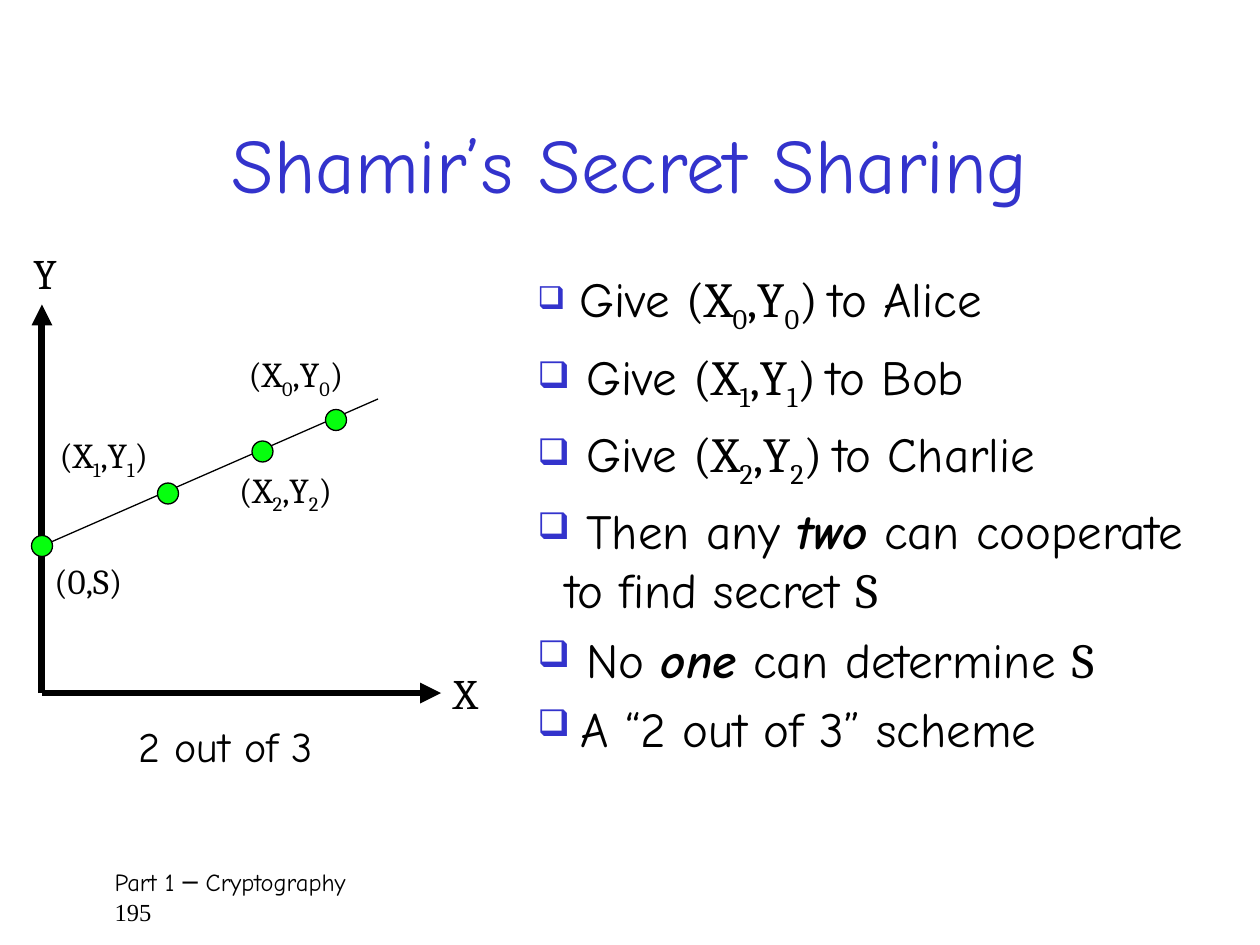
from lxml.etree import SubElement
from pptx import Presentation
from pptx.dml.color import RGBColor
from pptx.enum.shapes import MSO_CONNECTOR, MSO_SHAPE
from pptx.enum.text import MSO_ANCHOR, MSO_AUTO_SIZE, PP_ALIGN
from pptx.oxml.ns import qn
from pptx.util import Inches, Pt

CELL = Inches(1) / 12  # the slide is a grid of 120 columns by 90 rows
BLACK, BLUE, GREEN = "000000", "3333CC", "06FF0E"
HAND, SERIF, ROMAN = "Comic Neue", "Cambria", "Times New Roman"


def color(value):
    return RGBColor.from_string(value)


def cells(*counts):
    return [round(count * CELL) for count in counts]


def write(paragraph, text, font=HAND, size=28, ink=BLACK, strong=False, sub=False):
    run = paragraph.add_run()
    run.text = text
    run.font.name, run.font.size = font, Pt(size)
    run.font.color.rgb = color(ink)
    if strong:
        run.font.bold = run.font.italic = True
    if sub:
        run._r.get_or_add_rPr().set("baseline", "-25000")


def write_pair(paragraph, index, size, end=""):
    """Write the point (X, Y) with its subscripts."""
    for text in ("(X", index, ",Y", index, ")" + end):
        write(paragraph, text, font=SERIF, size=size, sub=text == index)


def add_frame(slide, box, wrap=True, grow=False):
    frame = slide.shapes.add_textbox(*cells(*box)).text_frame
    frame.word_wrap = wrap
    frame.auto_size = MSO_AUTO_SIZE.SHAPE_TO_FIT_TEXT if grow else MSO_AUTO_SIZE.NONE
    return frame


def add_line(slide, start, end, width, arrow=False):
    line = slide.shapes.add_connector(MSO_CONNECTOR.STRAIGHT, *cells(*start, *end))
    line.line.color.rgb = color(BLACK)
    line.line.width = Pt(width)
    if arrow:
        SubElement(line.line._get_or_add_ln(), qn("a:tailEnd"), type="triangle")
    SubElement(line._element.spPr, qn("a:effectLst"))


def add_dot(slide, x, y):
    dot = slide.shapes.add_shape(MSO_SHAPE.OVAL, *cells(x - 1, y - 1, 2, 2))
    dot.shadow.inherit = False
    dot.fill.solid()
    dot.fill.fore_color.rgb = color(GREEN)
    dot.line.color.rgb = color(BLACK)
    dot.line.width = Pt(0.75)


def add_bullet(paragraph):
    paragraph.space_after = Pt(6)
    props = paragraph._p.get_or_add_pPr()
    props.set("marL", str(Inches(0.22)))
    props.set("indent", str(-Inches(0.22)))
    SubElement(SubElement(props, qn("a:buClr")), qn("a:srgbClr"), val=BLUE)
    SubElement(props, qn("a:buSzPct"), val="75000")
    SubElement(props, qn("a:buChar"), char="❑")


def build_title(slide, box):
    frame = add_frame(slide, box)
    frame.vertical_anchor = MSO_ANCHOR.MIDDLE
    frame.paragraphs[0].alignment = PP_ALIGN.CENTER
    write(frame.paragraphs[0], "Shamir’s Secret Sharing", size=44, ink=BLUE)


def build_plot(slide, box):
    left, top, width, height = box

    def at(x, y):
        return left + x, top + y

    def label(x, y, w, h):
        frame = add_frame(slide, (*at(x, y), w, h), wrap=False, grow=True)
        return frame.paragraphs[0]

    # Axes and the secret's line
    origin = at(0, height)
    add_line(slide, origin, at(width, height), 4, arrow=True)
    add_line(slide, origin, at(0, 0), 4, arrow=True)
    add_line(slide, at(0, 23), at(32, 9), 0.75)

    # Shares on the line
    for x, y in ((0, 23), (12, 18), (21, 14), (28, 11)):
        add_dot(slide, *at(x, y))

    # Labels of the shares, the secret and the axes
    for index, x, y in (("0", 18.5, 4), ("1", 0.5, 11.7), ("2", 17.6, 15)):
        write_pair(label(x, y, 12.4, 5.2), index, 20)
    write(label(0, 23.7, 9.6, 5.2), "(0,S)", font=SERIF, size=20)
    write(label(width, height - 3, 5, 6), "X", font=SERIF, size=24)
    write(label(-2, -6, 5, 6), "Y", font=SERIF, size=24)
    write(label(8, height + 2, 21, 6.8), "2 out of 3", size=24)


def build_points(slide, box):
    frame = add_frame(slide, box, grow=True)

    def point():
        paragraph = frame.paragraphs[0]
        if paragraph.runs:
            paragraph = frame.add_paragraph()
        add_bullet(paragraph)
        return paragraph

    # Who gets which share
    for index, person in enumerate(("Alice", "Bob", "Charlie")):
        share = point()
        write(share, " ", size=28 if index else 24)
        write(share, "Give ")
        write_pair(share, str(index), 28, end=" ")
        write(share, f"to {person}")

    # What the shares can do
    for before, stressed, after in (
        (" Then any ", "two", " can cooperate to find secret "),
        (" No ", "one", " can determine "),
    ):
        claim = point()
        write(claim, before)
        write(claim, stressed, strong=True)
        write(claim, after)
        write(claim, "S", font=SERIF)

    scheme = point()
    write(scheme, " ", font=SERIF)
    write(scheme, "A “2 out of 3” scheme")


def build_footer(slide, box):
    frame = add_frame(slide, box)
    frame.margin_left = Inches(0.16)
    write(frame.paragraphs[0], "Part 1 ─ Cryptography", size=14)
    write(frame.add_paragraph(), "195", font=ROMAN, size=14)


def main():
    deck = Presentation()
    deck.slide_width, deck.slide_height = cells(120, 90)
    slide = deck.slides.add_slide(deck.slide_layouts[6])
    build_footer(slide, (9, 82, 103, 6))
    build_title(slide, (9, 8, 102, 15))
    build_plot(slide, (4, 29, 38, 37))
    build_points(slide, (50, 25, 68, 45.8))
    deck.save("out.pptx")


if __name__ == "__main__":
    main()
